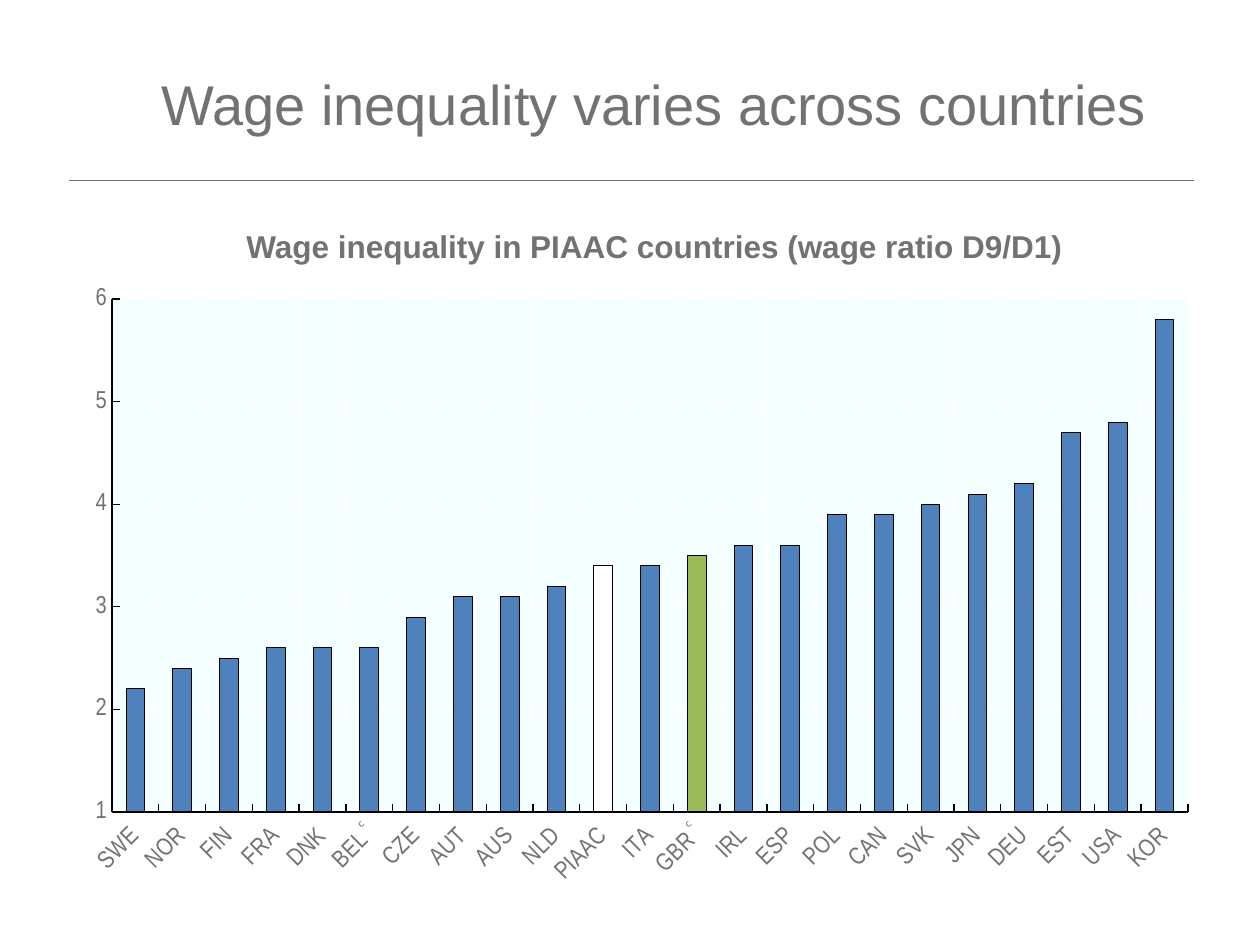
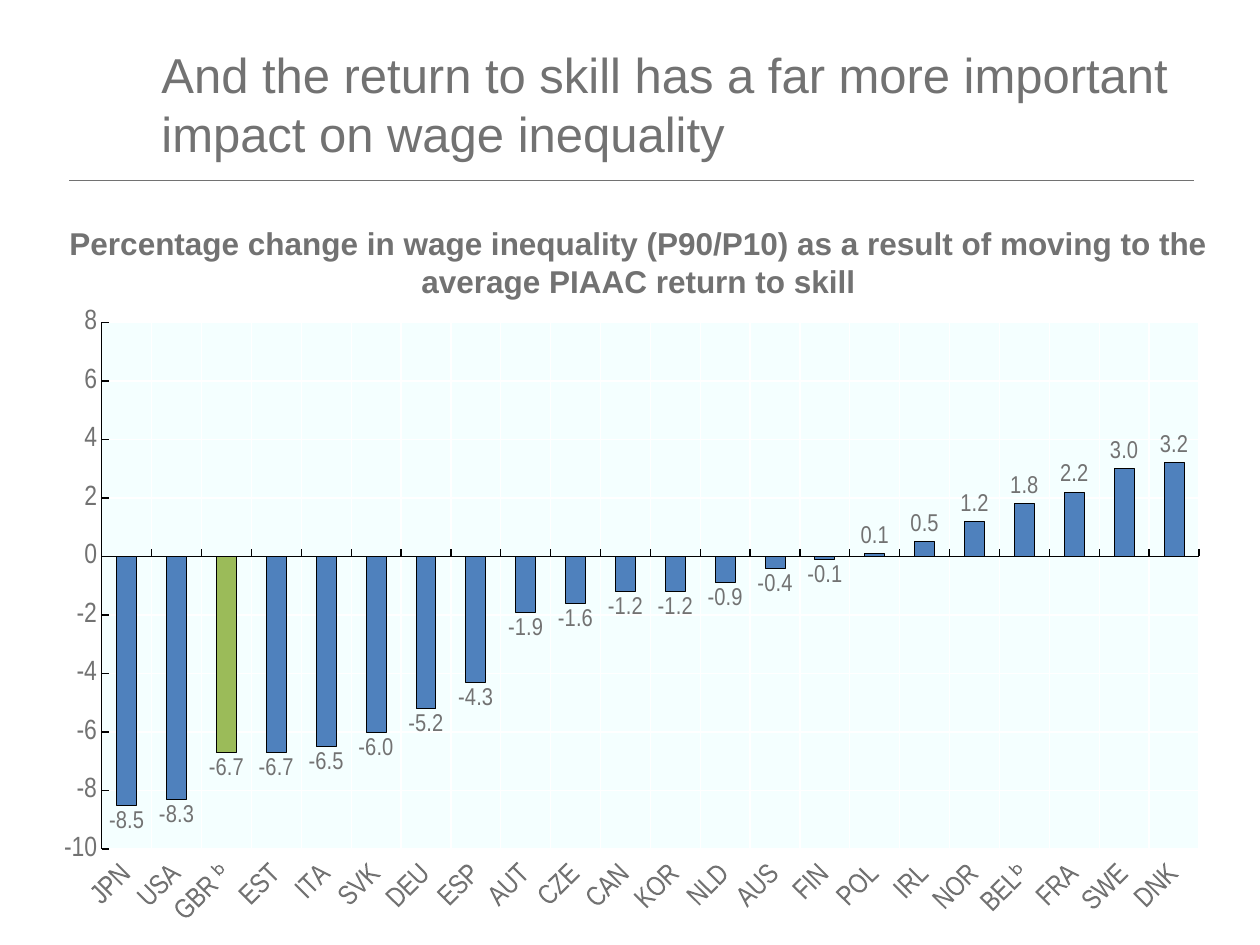
from lxml import etree
from pptx import Presentation
from pptx.chart.data import CategoryChartData
from pptx.dml.color import RGBColor
from pptx.enum.chart import (XL_CHART_TYPE, XL_LABEL_POSITION, XL_TICK_LABEL_POSITION,
                             XL_TICK_MARK)
from pptx.enum.shapes import MSO_CONNECTOR
from pptx.enum.text import MSO_ANCHOR, MSO_AUTO_SIZE, PP_ALIGN
from pptx.oxml import parse_xml
from pptx.oxml.ns import nsdecls, qn
from pptx.util import Cm, Pt

COLUMN = XL_CHART_TYPE.COLUMN_CLUSTERED
OUT_END = XL_LABEL_POSITION.OUTSIDE_END
LOW = XL_TICK_LABEL_POSITION.LOW
INSIDE = XL_TICK_MARK.INSIDE
NO_TICK = XL_TICK_MARK.NONE
STRAIGHT = MSO_CONNECTOR.STRAIGHT
MIDDLE = MSO_ANCHOR.MIDDLE
NO_FIT = MSO_AUTO_SIZE.NONE
LEFT, CENTER = PP_ALIGN.LEFT, PP_ALIGN.CENTER

GREY = RGBColor(0x72, 0x72, 0x72)
BLACK = RGBColor(0, 0, 0)
WHITE = RGBColor(0xFF, 0xFF, 0xFF)
BLUE = RGBColor(0x4F, 0x81, 0xBD)
GREEN = RGBColor(0x9B, 0xBB, 0x59)
PALE = RGBColor(0xF4, 0xFF, 0xFF)
TEXT_FONT, CHART_FONT = "Arial", "Arial Narrow"
TITLE_ONLY = 5

WAGES = {
    "SWE": 2.2, "NOR": 2.4, "FIN": 2.5, "FRA": 2.6, "DNK": 2.6, "BEL ͨ": 2.6,
    "CZE": 2.9, "AUT": 3.1, "AUS": 3.1, "NLD": 3.2, "PIAAC": 3.4, "ITA": 3.4,
    "GBR ͨ": 3.5, "IRL": 3.6, "ESP": 3.6, "POL": 3.9, "CAN": 3.9, "SVK": 4,
    "JPN": 4.1, "DEU": 4.2, "EST": 4.7, "USA": 4.8, "KOR": 5.8,
}
CHANGES = {
    "JPN": -8.5, "USA": -8.3, "GBR ᵇ": -6.7, "EST": -6.7, "ITA": -6.5, "SVK": -6,
    "DEU": -5.2, "ESP": -4.3, "AUT": -1.9, "CZE": -1.6, "CAN": -1.2, "KOR": -1.2,
    "NLD": -0.9, "AUS": -0.4, "FIN": -0.1, "POL": 0.1, "IRL": 0.5, "NOR": 1.2,
    "BELᵇ": 1.8, "FRA": 2.2, "SWE": 3, "DNK": 3.2,
}


def set_font(font, name, size, bold=False):
    font.name, font.size, font.bold = name, Pt(size), bold
    font.color.rgb = GREY


def set_line(line, color, width):
    line.color.rgb = color
    line.width = Pt(width)


def add_slide(deck, title, size, width):
    """Add a slide with its title and the rule below it."""
    slide = deck.slides.add_slide(deck.slide_layouts[TITLE_ONLY])
    head = slide.shapes.title
    head.left, head.top, head.width, head.height = Cm(3), Cm(0.66), Cm(width), Cm(2.84)
    frame = head.text_frame
    frame.text = title
    frame.auto_size, frame.vertical_anchor = NO_FIT, MIDDLE
    para = frame.paragraphs[0]
    para.alignment = LEFT
    set_font(para.font, TEXT_FONT, size)

    rule = slide.shapes.add_connector(STRAIGHT, Cm(1.4), Cm(3.63), Cm(24.06), Cm(3.63))
    set_line(rule.line, GREY, 0.5)
    etree.SubElement(rule._element.spPr, qn("a:effectLst"))
    return slide


def add_caption(slide, text, box):
    frame = slide.shapes.add_textbox(*map(Cm, box)).text_frame
    frame.word_wrap = True
    frame.text = text
    para = frame.paragraphs[0]
    para.alignment = CENTER
    set_font(para.font, TEXT_FONT, 18, bold=True)


def style_axis(axis):
    axis.major_tick_mark, axis.minor_tick_mark = INSIDE, NO_TICK
    set_line(axis.format.line, BLACK, 0.75)
    axis.has_major_gridlines = True
    set_line(axis.major_gridlines.format.line, WHITE, 0.75)


def style_plot(chart, area):
    """Place the inner plot area by fractions of the chart and tint it."""
    plot = chart._chartSpace.chart.plotArea
    for old in plot.findall(qn("c:layout")):
        plot.remove(old)
    marks = "".join(f'<c:{key} val="{val}"/>' for key, val in zip("xywh", area))
    plot.insert(0, parse_xml(
        f'<c:layout {nsdecls("c")}><c:manualLayout><c:layoutTarget val="inner"/>'
        f'<c:xMode val="edge"/><c:yMode val="edge"/>{marks}</c:manualLayout></c:layout>'))
    plot.append(parse_xml(
        f'<c:spPr {nsdecls("c", "a")}><a:solidFill><a:srgbClr val="{PALE}"/>'
        '</a:solidFill></c:spPr>'))


def add_columns(slide, values, box, area, scale, size, marked):
    """Add a column chart; scale is low, high, step and marked maps names to colours."""
    data = CategoryChartData()
    data.categories = list(values)
    data.add_series("Series 1", values.values())
    chart = slide.shapes.add_chart(COLUMN, *map(Cm, box), data).chart
    chart.has_legend = chart.has_title = False
    set_font(chart.font, CHART_FONT, size)

    names, axis = chart.category_axis, chart.value_axis
    style_axis(names)
    style_axis(axis)
    names.tick_label_position = LOW
    set_font(names.tick_labels.font, CHART_FONT, size)
    names._element.find(qn("c:txPr")).find(qn("a:bodyPr")).set("rot", "-2700000")
    axis.minimum_scale, axis.maximum_scale, axis.major_unit = scale
    axis.tick_labels.number_format = "General"
    axis.tick_labels.number_format_is_linked = False

    plot = chart.plots[0]
    plot.gap_width, plot.vary_by_categories = 150, False
    bars = plot.series[0]
    bars.invert_if_negative = False
    order = list(values)
    marks = [(bars.points[order.index(name)], color) for name, color in marked.items()]
    for part, color in [(bars, BLUE)] + marks:
        part.format.fill.solid()
        part.format.fill.fore_color.rgb = color
        set_line(part.format.line, BLACK, 0.5)
    style_plot(chart, area)
    return chart


def add_labels(chart):
    labels = chart.plots[0].series[0].data_labels
    labels.show_value = True
    labels.number_format, labels.number_format_is_linked = "#,##0.0", False
    labels.position = OUT_END
    set_font(labels.font, CHART_FONT, 14)


def main():
    deck = Presentation()
    deck.slide_width, deck.slide_height = Cm(25.4), Cm(19.05)

    slide = add_slide(deck, "Wage inequality varies across countries", 32, 20.6)
    add_columns(slide, WAGES, (1.3, 5.72, 22.83, 12.5), (0.042, 0.025, 0.95, 0.827),
                (1, 6, 1), 14, {"PIAAC": WHITE, "GBR ͨ": GREEN})
    add_caption(slide, "Wage inequality in PIAAC countries (wage ratio D9/D1)",
                (1.55, 4.45, 23.29, 1.02))

    slide = add_slide(deck, "And the return to skill has a far more important impact "
                      "on wage inequality", 28, 21.56)
    chart = add_columns(slide, CHANGES, (0.64, 6.25, 24.77, 12.4),
                        (0.057, 0.02, 0.893, 0.863), (-10, 8, 2), 16, {"GBR ᵇ": GREEN})
    add_labels(chart)
    add_caption(slide, "Percentage change in wage inequality (P90/P10) as a result of "
                "moving to the average PIAAC return to skill", (1.02, 4.39, 23.7, 1.8))

    deck.save("out.pptx")


if __name__ == "__main__":
    main()
